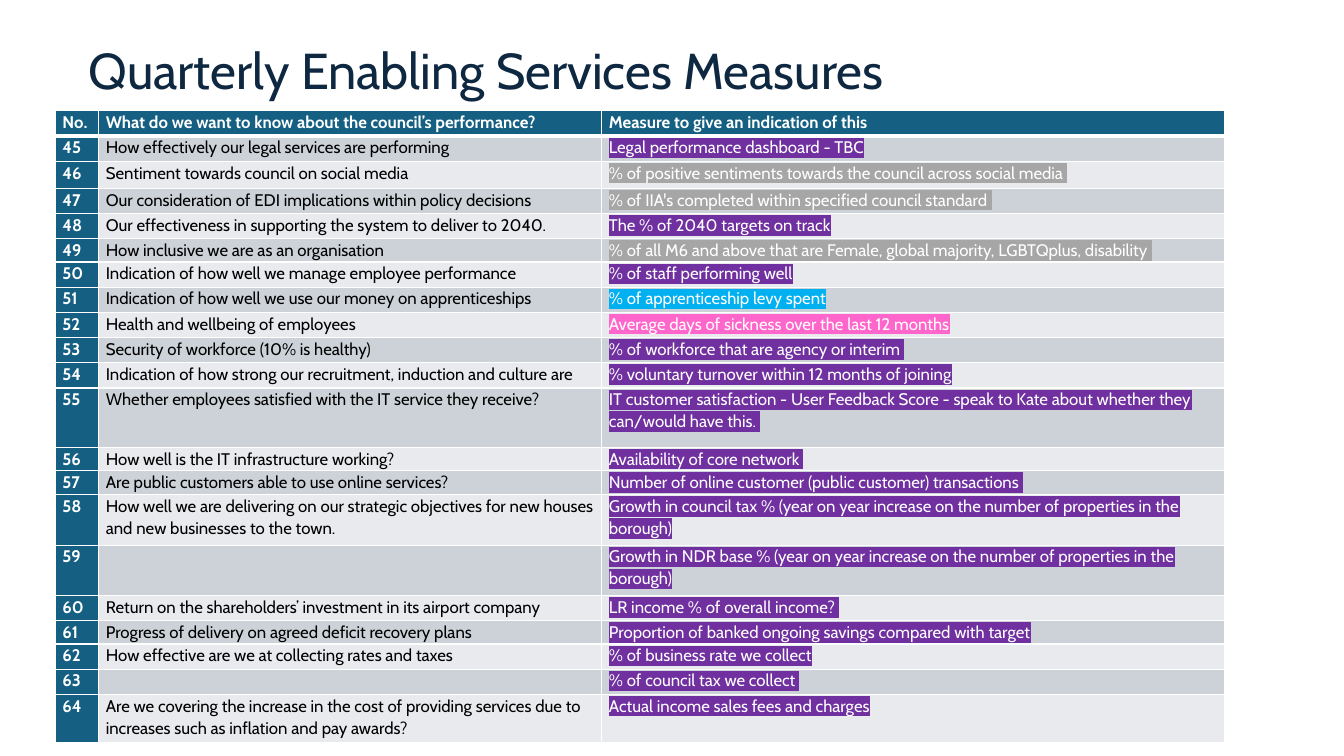
from lxml.etree import SubElement as Sub
from pptx import Presentation
from pptx.dml.color import RGBColor
from pptx.enum.text import MSO_ANCHOR as Anchor, MSO_AUTO_SIZE as Fit, PP_ALIGN as Align
from pptx.oxml.ns import qn
from pptx.util import Inches, Pt

FONT = "Cabin"
NAVY = RGBColor(0x0E, 0x28, 0x41)
TEAL = RGBColor(0x15, 0x60, 0x82)
WHITE = RGBColor(0xFF, 0xFF, 0xFF)
BLACK = RGBColor(0x00, 0x00, 0x00)
DARK = RGBColor(0xCC, 0xD2, 0xD8)
LIGHT = RGBColor(0xE8, 0xEA, 0xED)
PURPLE = RGBColor(0x70, 0x30, 0xA0)
GREY = RGBColor(0xA6, 0xA6, 0xA6)
BLUE = RGBColor(0x00, 0xB0, 0xF0)
PINK = RGBColor(0xFF, 0x66, 0xCC)

FIRST = 45
WIDTHS = (0.43, 4.99, 6.18)
HEADS = ("No.", "What do we want to know about the council’s performance?",
         "Measure to give an indication of this")
ROWS = (
    (0.25, "How effectively our legal services are performing",
     "Legal performance dashboard - TBC", PURPLE),
    (0.27, "Sentiment towards council on social media",
     "% of positive sentiments towards the council across social media ", GREY),
    (0.25, "Our consideration of EDI implications within policy decisions",
     "% of IIA's completed within specified council standard ", GREY),
    (0.25, "Our effectiveness in supporting the system to deliver to 2040.",
     "The % of 2040 targets on track", PURPLE),
    (0.23, "How inclusive we are as an organisation",
     "% of all M6 and above that are Female, global majority, LGBTQplus, disability ", GREY),
    (0.25, "Indication of how well we manage employee performance",
     "% of staff performing well", PURPLE),
    (0.25, "Indication of how well we use our money on apprenticeships",
     "% of apprenticeship levy spent", BLUE),
    (0.25, "Health and wellbeing of employees",
     "Average days of sickness over the last 12 months", PINK),
    (0.25, "Security of workforce (10% is healthy)",
     "% of workforce that are agency or interim ", PURPLE),
    (0.25, "Indication of how strong our recruitment, induction and culture are",
     "% voluntary turnover within 12 months of joining", PURPLE),
    (0.59, "Whether employees satisfied with the IT service they receive?",
     "IT customer satisfaction - User Feedback Score - speak to Kate about whether they "
     "can/would have this. ", PURPLE),
    (0.23, "How well is the IT infrastructure working?",
     "Availability of core network ", PURPLE),
    (0.24, "Are public customers able to use online services?",
     "Number of online customer (public customer) transactions ", PURPLE),
    (0.5, "How well we are delivering on our strategic objectives for new houses "
     "and new businesses to the town.",
     "Growth in council tax % (year on year increase on the number of properties in the "
     "borough)", PURPLE),
    (0.5, "",
     "Growth in NDR base % (year on year increase on the number of properties in the "
     "borough)", PURPLE),
    (0.25, "Return on the shareholders’ investment in its airport company",
     "LR income % of overall income? ", PURPLE),
    (0.23, "Progress of delivery on agreed deficit recovery plans",
     "Proportion of banked ongoing savings compared with target", PURPLE),
    (0.25, "How effective are we at collecting rates and taxes",
     "% of business rate we collect", PURPLE),
    (0.25, "", "% of council tax we collect ", PURPLE),
    (0.48, "Are we covering the increase in the cost of providing services due to "
     "increases such as inflation and pay awards?",
     "Actual income sales fees and charges", PURPLE),
)


def add_run(para, text, size, color, bold=False, mark=None):
    """Add one run of text, highlighted if a mark colour is given."""
    run = para.add_run()
    run.text = text
    font = run.font
    font.size, font.bold = Pt(size), bold
    font.color.rgb = color
    if mark is not None:
        light = Sub(font._element, qn("a:highlight"))
        Sub(light, qn("a:srgbClr"), val=str(mark))
    font.name = FONT


def add_edges(cell, top, base):
    """Draw white lines of the given top and base widths round a cell."""
    props = cell._tc.get_or_add_tcPr()
    for side, width in (("L", 1), ("R", 1), ("T", top), ("B", base)):
        line = Sub(props, qn("a:ln" + side), w=str(Pt(width)))
        fill = Sub(line, qn("a:solidFill"))
        Sub(fill, qn("a:srgbClr"), val=str(WHITE))


def fill_cell(cell, text, back, color, bold=False, mark=None, top=1, base=1):
    """Set the edges, fill and text of one table cell."""
    add_edges(cell, top, base)
    cell.fill.solid()
    cell.fill.fore_color.rgb = back
    cell.margin_left = cell.margin_right = Inches(0.07)
    cell.margin_top = cell.margin_bottom = 0
    para = cell.text_frame.paragraphs[0]
    para.line_spacing, para.space_after = 1.07, Pt(8)
    if text:
        add_run(para, text, 12, color, bold, mark)
    else:
        Sub(para._p, qn("a:endParaRPr"), sz="1200")


def set_title(slide, text):
    """Place and fill the title."""
    title = slide.shapes.title
    title.left, title.top = Inches(0.78), Inches(0)
    title.width, title.height = Inches(11.47), Inches(1.45)
    frame = title.text_frame
    frame.auto_size, frame.word_wrap = Fit.NONE, True
    frame.vertical_anchor = Anchor.MIDDLE
    para = frame.paragraphs[0]
    para.alignment, para.line_spacing = Align.LEFT, 0.9
    add_run(para, text, 36, NAVY)


def add_grid(slide):
    """Add the table of numbered measures."""
    highs = [0.25] + [row[0] for row in ROWS]
    grid = slide.shapes.add_table(
        len(highs), len(WIDTHS), Inches(0.55), Inches(1.1),
        Inches(sum(WIDTHS)), Inches(sum(highs))).table
    for col, width in zip(grid.columns, WIDTHS):
        col.width = Inches(width)
    for row, high in zip(grid.rows, highs):
        row.height = Inches(high)
    for col, head in enumerate(HEADS):
        fill_cell(grid.cell(0, col), head, TEAL, WHITE, True, base=3)
    for row, (_, goal, gauge, mark) in enumerate(ROWS, 1):
        back = DARK if row % 2 else LIGHT
        top = 3 if row == 1 else 1
        number = str(FIRST + row - 1)
        fill_cell(grid.cell(row, 0), number, TEAL, WHITE, True, top=top)
        fill_cell(grid.cell(row, 1), goal, back, BLACK, top=top)
        fill_cell(grid.cell(row, 2), gauge, back, WHITE, mark=mark, top=top)


def main():
    """Build and save the slide."""
    deck = Presentation()
    deck.slide_width, deck.slide_height = Inches(13.33), Inches(7.5)
    slide = deck.slides.add_slide(deck.slide_layouts[5])
    set_title(slide, "Quarterly Enabling Services Measures")
    add_grid(slide)
    deck.save("out.pptx")


if __name__ == "__main__":
    main()
